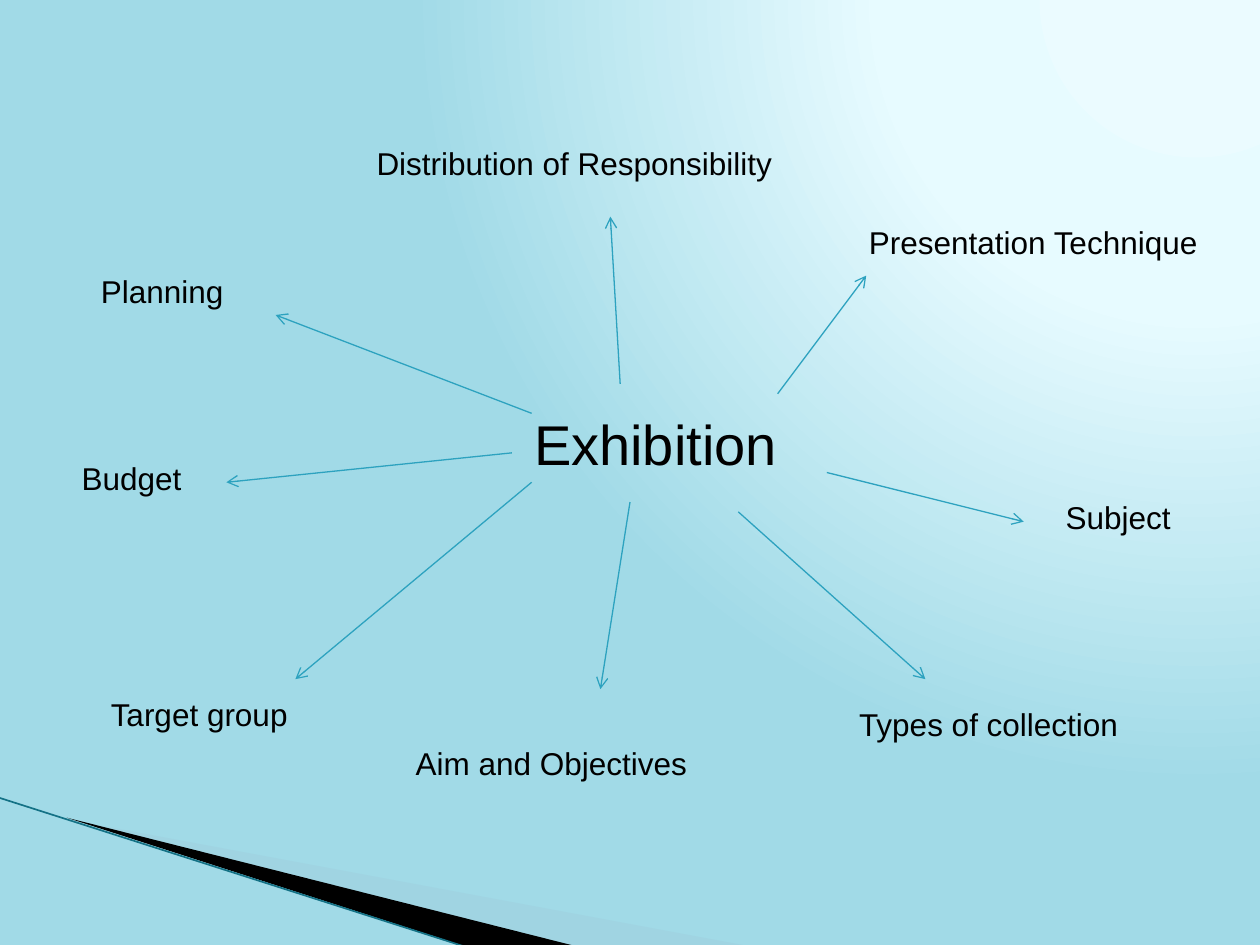
from pptx import Presentation
from pptx.dml.color import RGBColor
from pptx.enum.shapes import MSO_CONNECTOR
from pptx.enum.text import MSO_AUTO_SIZE
from pptx.oxml import parse_xml
from pptx.oxml.ns import nsdecls, qn
from pptx.util import Pt
from lxml.etree import SubElement

COLOURS = {
    "text": "000000",
    "arrow": "2DA2BF",
    "edge": "147286",
    "wedge": "000000",
    "veil": "A0CBDC",
    "glow": "EBFBFF",
    "pale": "E7FBFF",
    "sky": "A1DAE7",
}

# label, (left, top, width) of its box, arrow start, arrow end
TOPICS = [
    ("Aim and Objectives", (230.4, 421.9, 171.4), (360, 286.9), (343.1, 393.8)),
    ("Target group", (56.2, 393.8, 116.6), (303.8, 275.6), (168.8, 388.1)),
    ("Budget", (39.6, 258.8, 81.4), (292.5, 258.8), (129.4, 275.6)),
    ("Planning", (50.6, 151.9, 85), (303.8, 236.2), (157.5, 180)),
    ("Distribution of Responsibility", (208.1, 78.8, 242.6), (354.4, 219.4), (348.8, 123.8)),
    ("Presentation Technique", (489.4, 123.8, 203.8), (444.4, 225), (495, 157.5)),
    ("Subject", (601.9, 281.2, 74.9), (472.5, 270), (585, 298.1)),
    ("Types of collection", (483.8, 399.4, 164.2), (421.9, 292.5), (528.8, 388.1)),
]


class SlideArtist:
    font_name = "Arial"

    def __init__(self, page):
        self.page = page

    def colour(self, name):
        return RGBColor.from_string(COLOURS[name])

    def radial_background(self, stops, focus):
        """Fill the page from a focus rectangle, given as percent insets, outwards."""
        self.page.background.fill.gradient()
        gradient = self.page.element.find(".//" + qn("a:gradFill"))
        stop_xml = "".join(
            f'<a:gs pos="{percent * 1000}"><a:srgbClr val="{COLOURS[name]}"/></a:gs>'
            for percent, name in stops
        )
        insets = " ".join(f'{side}="{value * 1000}"' for side, value in zip("ltrb", focus))
        gradient.getparent().replace(gradient, parse_xml(
            f'<a:gradFill {nsdecls("a")} rotWithShape="1"><a:gsLst>{stop_xml}</a:gsLst>'
            f'<a:path path="circle"><a:fillToRect {insets}/></a:path></a:gradFill>'
        ))

    def polygon(self, points, colour, opacity=100):
        corners = [(Pt(x), Pt(y)) for x, y in points]
        builder = self.page.shapes.build_freeform(*corners[0])
        builder.add_line_segments(corners[1:], close=True)
        shape = builder.convert_to_shape()
        shape.shadow.inherit = False
        shape.fill.solid()
        shape.fill.fore_color.rgb = self.colour(colour)
        shape.line.fill.background()
        if opacity < 100:
            tint = shape.element.spPr.find(".//" + qn("a:srgbClr"))
            SubElement(tint, qn("a:alpha"), val=str(opacity * 1000))

    def line(self, start, end, colour, width, arrow=False):
        connector = self.page.shapes.add_connector(
            MSO_CONNECTOR.STRAIGHT, *map(Pt, start + end))
        connector.line.color.rgb = self.colour(colour)
        connector.line.width = Pt(width)
        properties = connector.element.spPr
        if arrow:
            SubElement(properties.find(qn("a:ln")), qn("a:tailEnd"), type="arrow")
        SubElement(properties, qn("a:effectLst"))

    def label(self, text, place, height=28.8, size=18):
        box = self.page.shapes.add_textbox(*map(Pt, place + (height,)))
        frame = box.text_frame
        frame.word_wrap = False
        frame.auto_size = MSO_AUTO_SIZE.SHAPE_TO_FIT_TEXT
        frame.text = text
        font = frame.paragraphs[0].runs[0].font
        font.name = self.font_name
        font.size = Pt(size)
        font.color.rgb = self.colour("text")


def main():
    deck = Presentation()
    deck.slide_width, deck.slide_height = Pt(720), Pt(540)
    artist = SlideArtist(deck.slides.add_slide(deck.slide_layouts[6]))

    artist.radial_background([(0, "glow"), (40, "pale"), (100, "sky")], (95, -106, 5, 206))
    artist.polygon([(39.6, 468.4), (428.4, 540.7), (328.3, 540.7)], "veil", opacity=40)
    artist.polygon([(38.2, 467.3), (329, 540.7), (267.8, 541.4)], "wedge")
    artist.line((-0.7, 455.8), (267.1, 541.4), "edge", 0.95)

    artist.label("Exhibition", (298.1, 230.4, 154.8), height=46.1, size=32)
    for text, place, start, end in TOPICS:
        artist.label(text, place)
        artist.line(start, end, "arrow", 0.75, arrow=True)

    deck.save("out.pptx")


if __name__ == "__main__":
    main()
